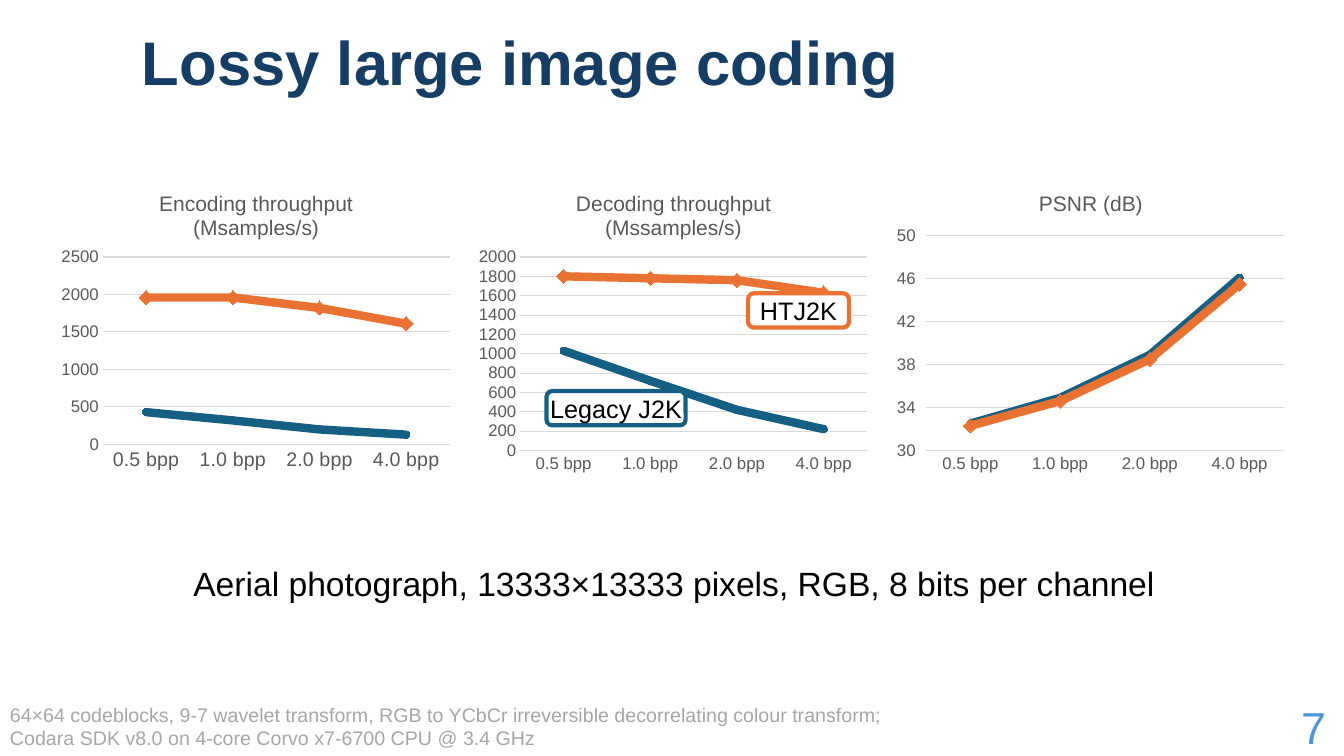
import pptx
import pptx.chart.data
import pptx.dml.color
import pptx.enum.chart
import pptx.enum.shapes
import pptx.enum.text
import pptx.oxml
import pptx.oxml.ns
import pptx.util

Inches = pptx.util.Inches
Pt = pptx.util.Pt
Align = pptx.enum.text.PP_ALIGN
Anchor = pptx.enum.text.MSO_ANCHOR
Marker = pptx.enum.chart.XL_MARKER_STYLE
Tick = pptx.enum.chart.XL_TICK_MARK

COLORS = {
    "navy": "163E64",
    "legacy": "156082",
    "high_throughput": "E97132",
    "axis_text": "595959",
    "grid": "D9D9D9",
    "note": "A6A6A6",
    "number": "4E95D9",
    "black": "000000",
    "white": "FFFFFF",
}
BIT_RATES = ["0.5 bpp", "1.0 bpp", "2.0 bpp", "4.0 bpp"]
SERIES_STYLES = [("legacy", Marker.CIRCLE, 5), ("high_throughput", Marker.DIAMOND, 10)]


class SlideBuilder:
    font_name = "Arial"

    def __init__(self, presentation):
        self.slide = presentation.slides.add_slide(presentation.slide_layouts[6])

    def color(self, name):
        return pptx.dml.color.RGBColor.from_string(COLORS[name])

    def style_font(self, font, size, color, bold=False):
        font.name = self.font_name
        font.size = Pt(size)
        font.bold = bold
        font.color.rgb = self.color(color)

    def style_line(self, line, color, width):
        line.color.rgb = self.color(color)
        line.width = Pt(width)

    def fill_text(self, frame, text, size, color, align, bold=False):
        frame.text = text
        for paragraph in frame.paragraphs:
            paragraph.alignment = align
            for run in paragraph.runs:
                self.style_font(run.font, size, color, bold)

    def text(self, box, text, size, color, align=Align.LEFT, anchor=Anchor.TOP, bold=False):
        frame = self.slide.shapes.add_textbox(*map(Inches, box)).text_frame
        frame.word_wrap = True
        frame.vertical_anchor = anchor
        self.fill_text(frame, text, size, color, align, bold)
        return frame

    def label(self, box, text, color):
        shape = self.slide.shapes.add_shape(
            pptx.enum.shapes.MSO_SHAPE.ROUNDED_RECTANGLE, *map(Inches, box))
        shape.shadow.inherit = False
        shape.fill.solid()
        shape.fill.fore_color.rgb = self.color("white")
        self.style_line(shape.line, color, 3)
        frame = shape.text_frame
        frame.margin_left = frame.margin_right = frame.margin_top = frame.margin_bottom = 0
        frame.vertical_anchor = Anchor.MIDDLE
        self.fill_text(frame, text, 18, "black", Align.CENTER)

    def place_plot(self, chart, plot_box):
        values = "".join(
            f'<c:{tag} val="{value}"/>' for tag, value in zip("xywh", plot_box))
        layout = pptx.oxml.parse_xml(
            f'<c:layout {pptx.oxml.ns.nsdecls("c")}><c:manualLayout>'
            '<c:layoutTarget val="inner"/><c:xMode val="edge"/><c:yMode val="edge"/>'
            f'{values}</c:manualLayout></c:layout>')
        plot_area = chart.element.find(".//" + pptx.oxml.ns.qn("c:plotArea"))
        for existing in plot_area.findall(pptx.oxml.ns.qn("c:layout")):
            plot_area.remove(existing)
        plot_area.insert(0, layout)

    def line_chart(self, left, title, values, plot_box, category_size=12, scale=None):
        data = pptx.chart.data.CategoryChartData()
        data.categories = BIT_RATES
        for number, series_values in enumerate(values, 1):
            data.add_series(f"Series {number}", series_values)
        chart = self.slide.shapes.add_chart(
            pptx.enum.chart.XL_CHART_TYPE.LINE_MARKERS,
            Inches(left), Inches(1.74), Inches(4), Inches(3), data).chart
        self.style_font(chart.font, 10, "black")
        chart.has_legend = False
        chart.has_title = True
        self.fill_text(chart.chart_title.text_frame, title, 15, "axis_text", Align.CENTER)
        chart.chart_title.include_in_layout = False
        self.place_plot(chart, plot_box)

        for axis, size in ((chart.category_axis, category_size), (chart.value_axis, 12)):
            axis.major_tick_mark = axis.minor_tick_mark = Tick.NONE
            self.style_font(axis.tick_labels.font, size, "axis_text")
        self.style_line(chart.category_axis.format.line, "grid", 0.75)
        value_axis = chart.value_axis
        value_axis.format.line.fill.background()
        value_axis.has_major_gridlines = True
        self.style_line(value_axis.major_gridlines.format.line, "grid", 0.75)
        if scale:
            value_axis.minimum_scale, value_axis.maximum_scale, value_axis.major_unit = scale
            value_axis.major_tick_mark = Tick.OUTSIDE

        chart.plots[0].vary_by_categories = False
        for series, (color, marker, size) in zip(chart.plots[0].series, SERIES_STYLES):
            series.smooth = False
            self.style_line(series.format.line, color, 6)
            series.marker.style = marker
            series.marker.size = size
            series.marker.format.fill.solid()
            series.marker.format.fill.fore_color.rgb = self.color(color)
            self.style_line(series.marker.format.line, color, 0.75)


def main():
    presentation = pptx.Presentation()
    presentation.slide_width = Inches(13.33)
    presentation.slide_height = Inches(7.5)
    builder = SlideBuilder(presentation)

    title = builder.text((1.31, 0.22, 11.25, 0.86), "Lossy large image coding", 44, "navy",
                         anchor=Anchor.MIDDLE, bold=True)
    title.paragraphs[0].line_spacing = 0.9

    builder.line_chart(0.54, "Encoding throughput (Msamples/s)",
                       [(430, 320, 200, 130), (1960, 1960, 1820, 1610)],
                       (0.12, 0.27, 0.86, 0.62), category_size=14)
    builder.line_chart(4.68, "Decoding throughput (Mssamples/s)",
                       [(1030, 720, 420, 220), (1800, 1780, 1760, 1630)],
                       (0.12, 0.27, 0.86, 0.64))
    builder.line_chart(8.82, "PSNR (dB)",
                       [(32.5, 34.9, 38.9, 46.1), (32.3, 34.6, 38.5, 45.5)],
                       (0.09, 0.2, 0.89, 0.71), scale=(30, 50, 4))

    builder.label((7.42, 2.91, 1, 0.34), "HTJ2K", "high_throughput")
    builder.label((5.42, 3.88, 1.38, 0.34), "Legacy J2K", "legacy")

    builder.text((0, 6.92, 13.01, 0.57),
                 "64×64 codeblocks, 9-7 wavelet transform, RGB to YCbCr irreversible "
                 "decorrelating colour transform;\n"
                 "Codara SDK v8.0 on 4-core Corvo x7-6700 CPU @ 3.4 GHz", 14, "note")
    builder.text((0.2, 5.54, 12.97, 0.5),
                 "Aerial photograph, 13333×13333 pixels, RGB, 8 bits per channel",
                 24, "black", Align.CENTER)
    builder.text((10.25, 6.95, 3, 0.51), "7", 32, "number", Align.RIGHT, Anchor.MIDDLE)

    presentation.save("out.pptx")


if __name__ == "__main__":
    main()
